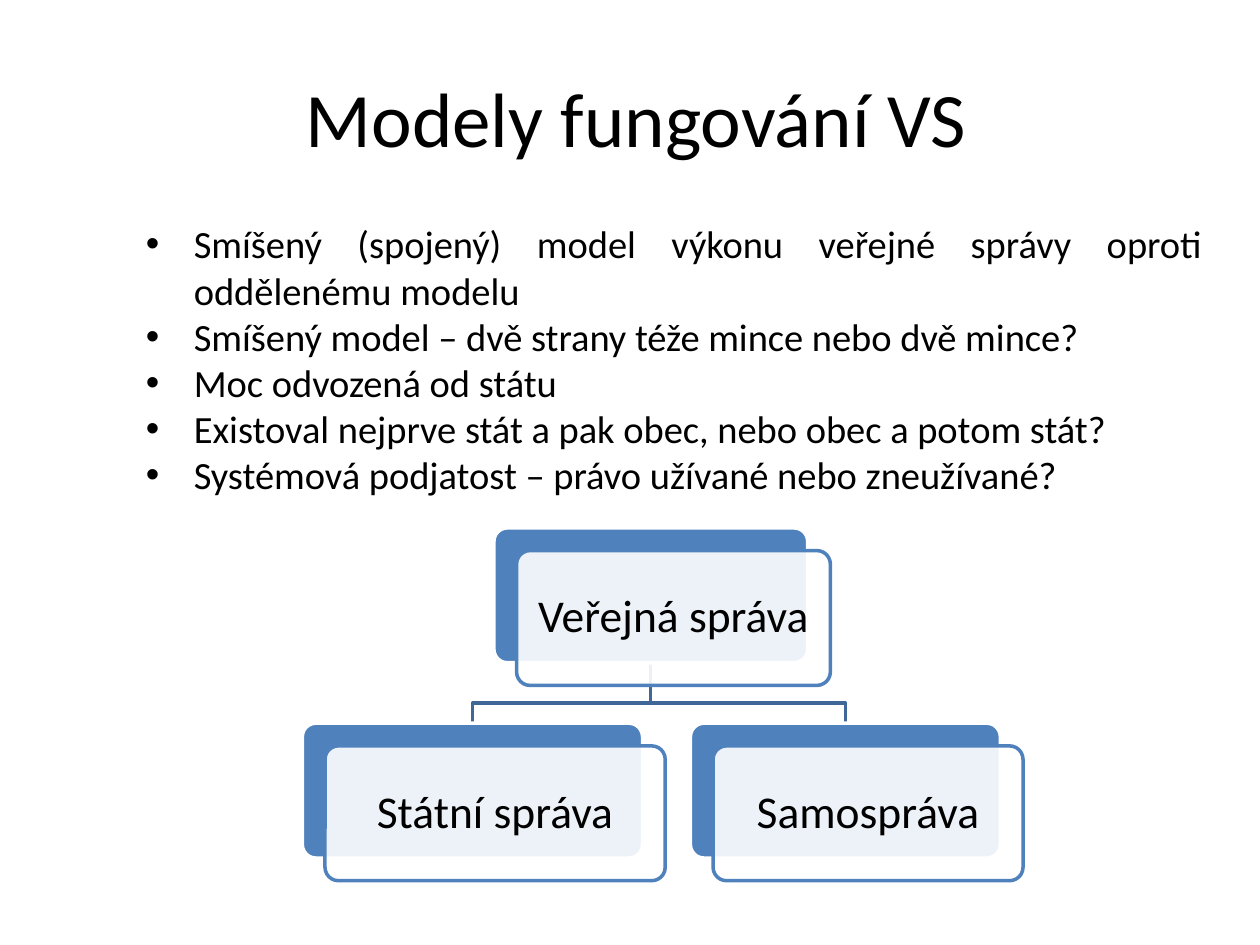
from dataclasses import dataclass

from lxml import etree
from pptx import Presentation
from pptx.dml.color import RGBColor
from pptx.enum.shapes import MSO_SHAPE
from pptx.enum.text import MSO_ANCHOR, PP_ALIGN
from pptx.oxml.ns import qn
from pptx.util import Inches, Pt

ROUNDED = MSO_SHAPE.ROUNDED_RECTANGLE
MIDDLE = MSO_ANCHOR.MIDDLE
CENTER, JUSTIFY = PP_ALIGN.CENTER, PP_ALIGN.JUSTIFY
TITLE_ONLY = 5


@dataclass(frozen=True)
class Theme:
    font: str = "Calibri"
    text: RGBColor = RGBColor(0, 0, 0)
    white: RGBColor = RGBColor(255, 255, 255)
    accent: RGBColor = RGBColor(0x4F, 0x81, 0xBD)
    branch: RGBColor = RGBColor(0x3F, 0x67, 0x97)
    title_size: int = 44
    bullet_size: int = 22
    card_size: int = 26
    line_width: int = 2


class SlideBuilder:
    def __init__(self, slide, theme):
        self.slide = slide
        self.theme = theme

    def _write(self, paragraph, text, size, align):
        paragraph.alignment = align
        run = paragraph.add_run()
        run.text = text
        run.font.name = self.theme.font
        run.font.size = Pt(size)
        run.font.color.rgb = self.theme.text

    def title(self, text, left, top, width, height):
        title = self.slide.shapes.title
        title.left, title.top = Inches(left), Inches(top)
        title.width, title.height = Inches(width), Inches(height)
        title.text_frame.vertical_anchor = MIDDLE
        self._write(title.text_frame.paragraphs[0], text, self.theme.title_size, CENTER)

    def bullets(self, items, left, top, width, height, indent):
        box = self.slide.shapes.add_textbox(
            Inches(left), Inches(top), Inches(width), Inches(height))
        frame = box.text_frame
        frame.word_wrap = True
        for index, item in enumerate(items):
            paragraph = frame.add_paragraph() if index else frame.paragraphs[0]
            properties = paragraph._p.get_or_add_pPr()
            properties.set("marL", str(Inches(indent)))
            properties.set("indent", str(Inches(-indent)))
            etree.SubElement(properties, qn("a:buFont")).set("typeface", "Arial")
            etree.SubElement(properties, qn("a:buChar")).set("char", "•")
            self._write(paragraph, item, self.theme.bullet_size, JUSTIFY)

    def branch(self, start, end, bend_y):
        """Draw an elbow line that turns sideways at bend_y."""
        points = [start, (start[0], bend_y), (end[0], bend_y), end]
        corners = [(Inches(x), Inches(y)) for x, y in points]
        builder = self.slide.shapes.build_freeform(*corners[0])
        builder.add_line_segments(corners[1:], close=False)
        line = builder.convert_to_shape()
        line.shadow.inherit = False
        line.fill.background()
        line.line.color.rgb = self.theme.branch
        line.line.width = Pt(self.theme.line_width)

    def _panel(self, left, top, width, height, fill, outline):
        panel = self.slide.shapes.add_shape(
            ROUNDED, Inches(left), Inches(top), Inches(width), Inches(height))
        panel.adjustments[0] = 0.1
        panel.shadow.inherit = False
        panel.fill.solid()
        panel.fill.fore_color.rgb = fill
        panel.line.color.rgb = outline
        panel.line.width = Pt(self.theme.line_width)
        return panel

    def card(self, label, left, top, width, height, offset):
        """Draw a solid panel with a translucent, labelled panel shifted over it."""
        theme = self.theme
        self._panel(left, top, width, height, theme.accent, theme.white)
        front = self._panel(left + offset, top + offset, width, height,
                            theme.white, theme.accent)
        color = front._element.spPr.find(qn("a:solidFill"))[0]
        etree.SubElement(color, qn("a:alpha")).set("val", "90000")
        frame = front.text_frame
        frame.word_wrap = True
        frame.vertical_anchor = MIDDLE
        frame.margin_left = frame.margin_right = Inches(0.11)
        frame.margin_top = frame.margin_bottom = Inches(0.11)
        frame.paragraphs[0].line_spacing = 0.9
        self._write(frame.paragraphs[0], label, theme.card_size, CENTER)


def main():
    presentation = Presentation()
    presentation.slide_width, presentation.slide_height = Inches(10), Inches(7.5)
    slide = presentation.slides.add_slide(presentation.slide_layouts[TITLE_ONLY])
    builder = SlideBuilder(slide, Theme())

    builder.title("Modely fungování VS", 0.35, 0.39, 9.4, 1.08)
    builder.bullets([
        "Smíšený (spojený) model výkonu veřejné správy oproti oddělenému modelu",
        "Smíšený model – dvě strany téže mince nebo dvě mince?",
        "Moc odvozená od státu",
        "Existoval nejprve stát a pak obec, nebo obec a potom stát?",
        "Systémová podjatost – právo užívané nebo zneužívané?",
    ], 1.06, 1.7, 8.58, 2.69, indent=0.38)

    card_height, offset = 1.07, 0.18
    parent_top, child_top = 4.19, 5.74
    parent = ("Veřejná správa", 3.92, 2.49)
    children = [("Státní správa", 2.4, 2.7), ("Samospráva", 5.48, 2.46)]

    stem = (parent[1] + parent[2] / 2, parent_top + card_height)
    for _, left, width in reversed(children):
        builder.branch(stem, (left + width / 2, child_top), bend_y=5.58)
    builder.card(parent[0], parent[1], parent_top, parent[2], card_height, offset)
    for label, left, width in children:
        builder.card(label, left, child_top, width, card_height, offset)

    presentation.save("out.pptx")


if __name__ == "__main__":
    main()
